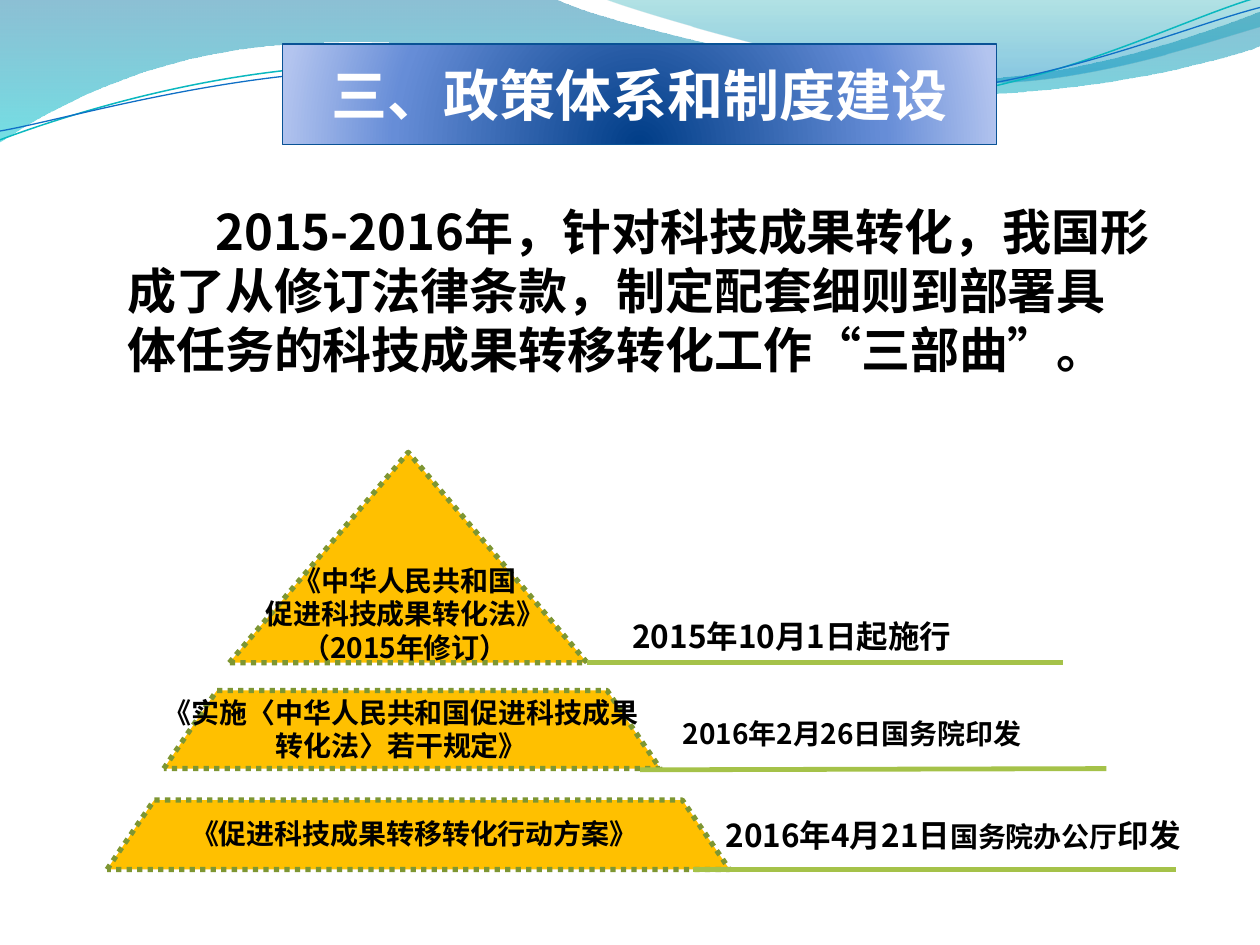
import math

import lxml.etree
import pptx
import pptx.dml.color
import pptx.enum.dml
import pptx.enum.shapes
import pptx.enum.text
import pptx.oxml.ns
import pptx.util

Inches, Pt = pptx.util.Inches, pptx.util.Pt
RGB = pptx.dml.color.RGBColor
SHAPE = pptx.enum.shapes.MSO_SHAPE
ALIGN = pptx.enum.text.PP_ALIGN
qn = pptx.oxml.ns.qn
add = lxml.etree.SubElement

FONT = "Noto Sans CJK SC"
BLACK, WHITE = RGB(0, 0, 0), RGB(255, 255, 255)
GOLD, OLIVE, GREEN = RGB(0xFF, 0xC0, 0), RGB(0x7E, 0x96, 0x32), RGB(0xA5, 0xC2, 0x49)
NAVY, ROYAL, PALE = RGB(0, 0x3D, 0x87), RGB(0x66, 0x8D, 0xD7), RGB(0xB3, 0xC4, 0xEF)
EDGE, TEAL, BLUE = RGB(0x09, 0x52, 0x95), RGB(0x0A, 0xB8, 0xBF), RGB(0x0F, 0x6F, 0xC6)
DEEP, CYAN = RGB(0, 0x74, 0xA1), RGB(0, 0xC6, 0xCF)
SEA, SKY = RGB(0, 0xA1, 0xA9), RGB(0, 0x8B, 0xBF)


def turn(point, mid, angle):
    """Rotate a point clockwise about mid."""
    x, y = point[0] - mid[0], point[1] - mid[1]
    c, s = math.cos(math.radians(angle)), math.sin(math.radians(angle))
    return mid[0] + x * c - y * s, mid[1] + x * s + y * c


class Deck:
    def __init__(self):
        self.prs = pptx.Presentation()
        self.prs.slide_width, self.prs.slide_height = Inches(10), Inches(7.5)
        self.slide = self.prs.slides.add_slide(self.prs.slide_layouts[1])
        self.shapes = self.slide.shapes

    def place(self, item, box):
        item.left, item.top, item.width, item.height = map(Inches, box)

    def style(self, para, size, color=BLACK, align=ALIGN.LEFT):
        font = para.font
        font.name, font.size, font.bold = FONT, Pt(size), True
        font.color.rgb = color
        para.alignment = align
        para.space_before = Pt(0)
        props = para._p.get_or_add_pPr().find(qn("a:defRPr"))
        latin = props.find(qn("a:latin"))
        latin.addnext(latin.makeelement(qn("a:ea"), {"typeface": FONT}))

    def blend(self, shape, stops, rect=None):
        """Gradient of (position, colour, opacity): downward, or round about rect."""
        shape.fill.background()
        old = shape._element.spPr.find(qn("a:noFill"))
        grad = old.makeelement(qn("a:gradFill"), {"rotWithShape": "1"})
        row = add(grad, qn("a:gsLst"))
        for pos, color, alpha in stops:
            stop = add(row, qn("a:gs"), pos=str(pos * 1000))
            tint = add(stop, qn("a:srgbClr"), val=str(color))
            if alpha < 100:
                add(tint, qn("a:alpha"), val=str(alpha * 1000))
        if rect:
            ring = add(grad, qn("a:path"), {"path": "circle"})
            add(ring, qn("a:fillToRect"), {k: str(v * 1000) for k, v in zip("ltrb", rect)})
        else:
            add(grad, qn("a:lin"), ang="5400000", scaled="1")
        old.getparent().replace(old, grad)

    def wave(self, start, steps, stops=None, color=None, width=0, mid=None, tilt=0):
        """Steps are lines (x, y) or cubic curves (six numbers)."""
        pts = [start] + [s[i:i + 2] for s in steps for i in range(0, len(s), 2)]
        if mid:
            pts = [turn(p, mid, tilt) for p in pts]
        pts = [(Inches(x), Inches(y)) for x, y in pts]
        form = self.shapes.build_freeform(*pts[0], scale=1.0)
        form.add_line_segments(pts[1:], close=bool(stops))
        shape = form.convert_to_shape()
        shape.rotation = -tilt % 360
        shape.shadow.inherit = False

        # Join each run of three points into one curve
        lines = iter(list(shape._element.iter(qn("a:lnTo"))))
        for step in steps:
            first = next(lines)
            if len(step) == 6:
                curve = first.makeelement(qn("a:cubicBezTo"), {})
                first.addprevious(curve)
                for line in (first, next(lines), next(lines)):
                    curve.append(line[0])
                    line.getparent().remove(line)

        if stops:
            self.blend(shape, stops)
            shape.line.fill.background()
        else:
            shape.fill.background()
            shape.line.color.rgb, shape.line.width = color, Pt(width)

    def banner(self, text, box):
        title = self.shapes.title
        self.place(title, box)
        geom = add(title._element.spPr, qn("a:prstGeom"), prst="roundRect")
        add(geom, qn("a:avLst"))
        self.blend(title, [(0, NAVY, 100), (68, ROYAL, 100), (100, PALE, 100)],
                   (50, 130, 50, -30))
        title.line.color.rgb, title.line.width = EDGE, Pt(0.75)
        frame = title.text_frame
        frame.text = text
        frame.vertical_anchor = pptx.enum.text.MSO_ANCHOR.MIDDLE
        self.style(frame.paragraphs[0], 32, WHITE, ALIGN.CENTER)
        self.shapes._spTree.append(title._element)  # in front of the waves

    def body(self, text, box, indent):
        item = self.slide.placeholders[1]
        self.place(item, box)
        frame = item.text_frame
        frame.auto_size = pptx.enum.text.MSO_AUTO_SIZE.NONE
        frame.text = text
        para = frame.paragraphs[0]
        self.style(para, 28)
        props = para._p.get_or_add_pPr()
        props.set("marL", "0")
        props.set("indent", str(Inches(indent)))
        props.find(qn("a:defRPr")).addprevious(props.makeelement(qn("a:buNone"), {}))

    def tier(self, kind, box):
        shape = self.shapes.add_shape(kind, *map(Inches, box))
        shape.shadow.inherit = False
        if kind == SHAPE.TRAPEZOID:
            shape.adjustments[0] = 0.68
        shape.fill.solid()
        shape.fill.fore_color.rgb = GOLD
        shape.line.color.rgb, shape.line.width = OLIVE, Pt(3)
        shape.line.dash_style = pptx.enum.dml.MSO_LINE.ROUND_DOT

    def label(self, lines, box, size=16, align=ALIGN.LEFT):
        """Each line is a list of texts or (text, size) pairs."""
        frame = self.shapes.add_textbox(*map(Inches, box)).text_frame
        frame.word_wrap = True
        for i, line in enumerate(lines):
            para = frame.add_paragraph() if i else frame.paragraphs[0]
            self.style(para, size, align=align)
            for part in line:
                run = para.add_run()
                if isinstance(part, tuple):
                    run.text, run.font.size = part[0], Pt(part[1])
                else:
                    run.text = part

    def rule(self, x1, y1, x2, y2):
        line = self.shapes.add_connector(
            pptx.enum.shapes.MSO_CONNECTOR.STRAIGHT, *map(Inches, (x1, y1, x2, y2)))
        line.line.color.rgb, line.line.width = GREEN, Pt(2.75)
        add(line._element.spPr, qn("a:effectLst"))


def main():
    deck = Deck()

    # Waves along the top
    deck.wave((0, 0), [(4.4, -0.01), (4.76, 0.17, 6.64, 0.63, 7.58, 0.63),
                       (8.53, 0.63, 9.58, 0.26, 10, 0.09), (10.01, 0.36),
                       (9.83, 0.44, 8.7, 0.76, 7.46, 0.75),
                       (6.22, 0.75, 3.82, 0.28, 2.57, 0.34),
                       (1.29, 0.36, 0.46, 0.83, -0.01, 1.13)],
              stops=[(0, DEEP, 45), (100, CYAN, 55)])
    deck.wave((4.79, -0.01), [(5.09, 0.11, 6.82, 0.62, 7.69, 0.65),
                              (8.56, 0.69, 9.61, 0.32, 10, 0.21), (10, 0)],
              stops=[(0, SEA, 30), (80, SKY, 45)])
    deck.wave((0, 1.11), [(0.48, 0.93, 1.58, 0.57, 2.77, 0.52),
                          (3.95, 0.47, 5.93, 0.89, 7.13, 0.8),
                          (8.33, 0.71, 9.38, 0.15, 9.98, -0.02)],
              color=TEAL, width=0.85, mid=(4.99, 0.58), tilt=2.7)
    deck.wave((0, 1.04), [(0.47, 0.96, 1.64, 0.61, 2.83, 0.56),
                          (4.03, 0.51, 5.97, 0.84, 7.17, 0.75),
                          (8.36, 0.67, 9.41, 0.21, 10, 0.06)],
              color=BLUE, width=0.75, mid=(5, 0.59), tilt=2.7)

    # Title and introduction
    deck.banner("三、政策体系和制度建设", (2.24, 0.35, 5.67, 0.8))
    deck.body("2015-2016年，针对科技成果转化，我国形成了从修订法律条款，制定配套细则到"
              "部署具体任务的科技成果转移转化工作“三部曲”。", (0.91, 1.55, 8.35, 1.51), 0.7)

    # Pyramid tiers: shape, its box, text, text box
    tiers = [
        (SHAPE.ISOSCELES_TRIANGLE, (1.82, 3.59, 2.84, 1.67),
         [["《中华人民共和国"], ["促进科技成果转化法》"], ["（2015年修订）"]],
         (1.85, 4.42, 2.73, 0.91)),
        (SHAPE.TRAPEZOID, (1.3, 5.48, 3.94, 0.62),
         [["《实施〈中华人民共和国促进科技成果转化法〉若干规定》"]],
         (1.14, 5.47, 4.09, 0.64)),
        (SHAPE.TRAPEZOID, (0.85, 6.35, 4.94, 0.55),
         [["《促进科技成果转移转化行动方案》"]], (1.1, 6.43, 4.38, 0.37)),
    ]
    for kind, box, lines, area in tiers:
        deck.tier(kind, box)
        deck.label(lines, area, align=ALIGN.CENTER)

    # Dates: line ends, text, text box, size
    dates = [
        ((4.66, 5.26, 8.44, 5.26), ["2015年10月1日起施行"], (4.92, 4.85, 4.02, 0.4), 18),
        ((5.08, 6.11, 8.78, 6.1), ["2016年2月26日国务院印发"], (5.32, 5.64, 4.02, 0.37), 16),
        ((5.5, 6.9, 9.33, 6.9), ["2016年4月21日", ("国务院办公厅", 16), "印发"],
         (5.66, 6.43, 4.3, 0.4), 18),
    ]
    for ends, line, area, size in dates:
        deck.rule(*ends)
        deck.label([line], area, size)

    deck.prs.save("out.pptx")


if __name__ == "__main__":
    main()
